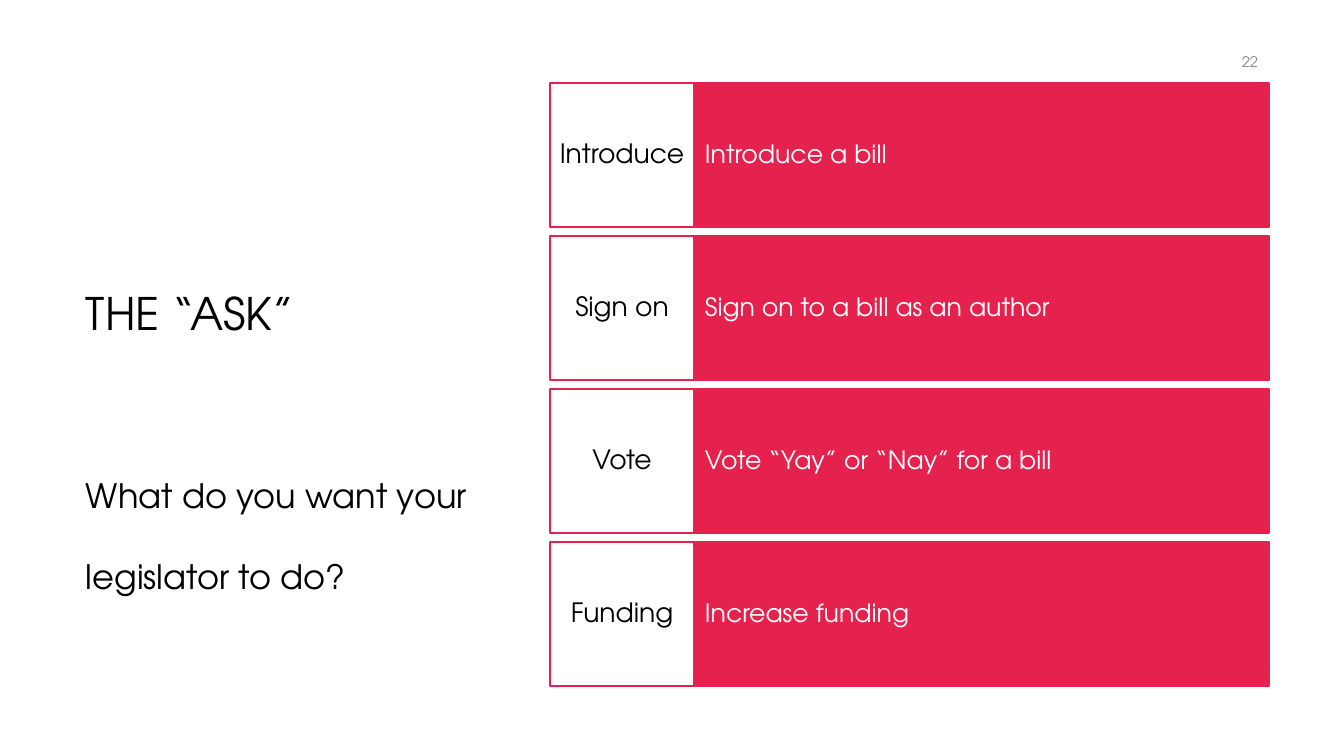
from pptx import Presentation
from pptx.dml.color import RGBColor
from pptx.enum.shapes import MSO_SHAPE as Kind
from pptx.enum.text import MSO_ANCHOR as Anchor, PP_ALIGN as Align
from pptx.util import Pt

PX = 914400 / 100.8
FONT = "TeX Gyre Adventor"
RED, WHITE, BLACK, GRAY = "E5224E", "FFFFFF", "000000", "8C8C8C"


def color(code):
    return RGBColor.from_string(code)


def write(box, text, size, tint, anchor=Anchor.MIDDLE, align=Align.LEFT,
          lines=0.9, pad=(10, 5)):
    """Fill a box with one paragraph; pad is the side and the top inset in px."""
    frame = box.text_frame
    frame.word_wrap = True
    frame.vertical_anchor = anchor
    frame.margin_left = frame.margin_right = round(pad[0] * PX)
    frame.margin_top = frame.margin_bottom = round(pad[1] * PX)
    para = frame.paragraphs[0]
    para.alignment = align
    para.line_spacing = lines
    run = para.add_run()
    run.text = text
    run.font.name = FONT
    run.font.size = Pt(size)
    run.font.color.rgb = color(tint)


deck = Presentation()
deck.slide_width, deck.slide_height = round(1344 * PX), round(756 * PX)
slide = deck.slides.add_slide(deck.slide_layouts[6])
shapes = slide.shapes

# Heading, question and page number
for area, text, size, tint, style in [
    ((76, 168, 454, 177), "THE “ASK”", 32, BLACK, {"anchor": Anchor.BOTTOM}),
    ((76, 345, 454, 341), "What do you want your legislator to do?", 24, BLACK,
     {"lines": 2.0}),
    ((966, 42, 302, 40), "22", 10.5, GRAY, {"align": Align.RIGHT, "lines": 1.0}),
]:
    box = shapes.add_textbox(*[round(v * PX) for v in area])
    write(box, text, size, tint, **style)

# One row for each kind of request
TOP, STEP, HIGH = 83, 153, 144
asks = [
    ("Introduce", "Introduce a bill"),
    ("Sign on", "Sign on to a bill as an author"),
    ("Vote", "Vote “Yay” or “Nay” for a bill"),
    ("Funding", "Increase funding"),
]
for row, (label, detail) in enumerate(asks):
    top = TOP + row * STEP
    for left, wide, fill, text, size, tint, align, pad in [
        (694, 575, RED, detail, 18, WHITE, Align.LEFT, (11, 36)),
        (550, 144, WHITE, label, 19, BLACK, Align.CENTER, (8, 14)),
    ]:
        area = [round(v * PX) for v in (left, top, wide, HIGH)]
        cell = shapes.add_shape(Kind.RECTANGLE, *area)
        cell.shadow.inherit = False
        cell.fill.solid()
        cell.fill.fore_color.rgb = color(fill)
        cell.line.color.rgb = color(RED)
        cell.line.width = Pt(1)
        write(cell, text, size, tint, align=align, pad=pad)

deck.save("out.pptx")
